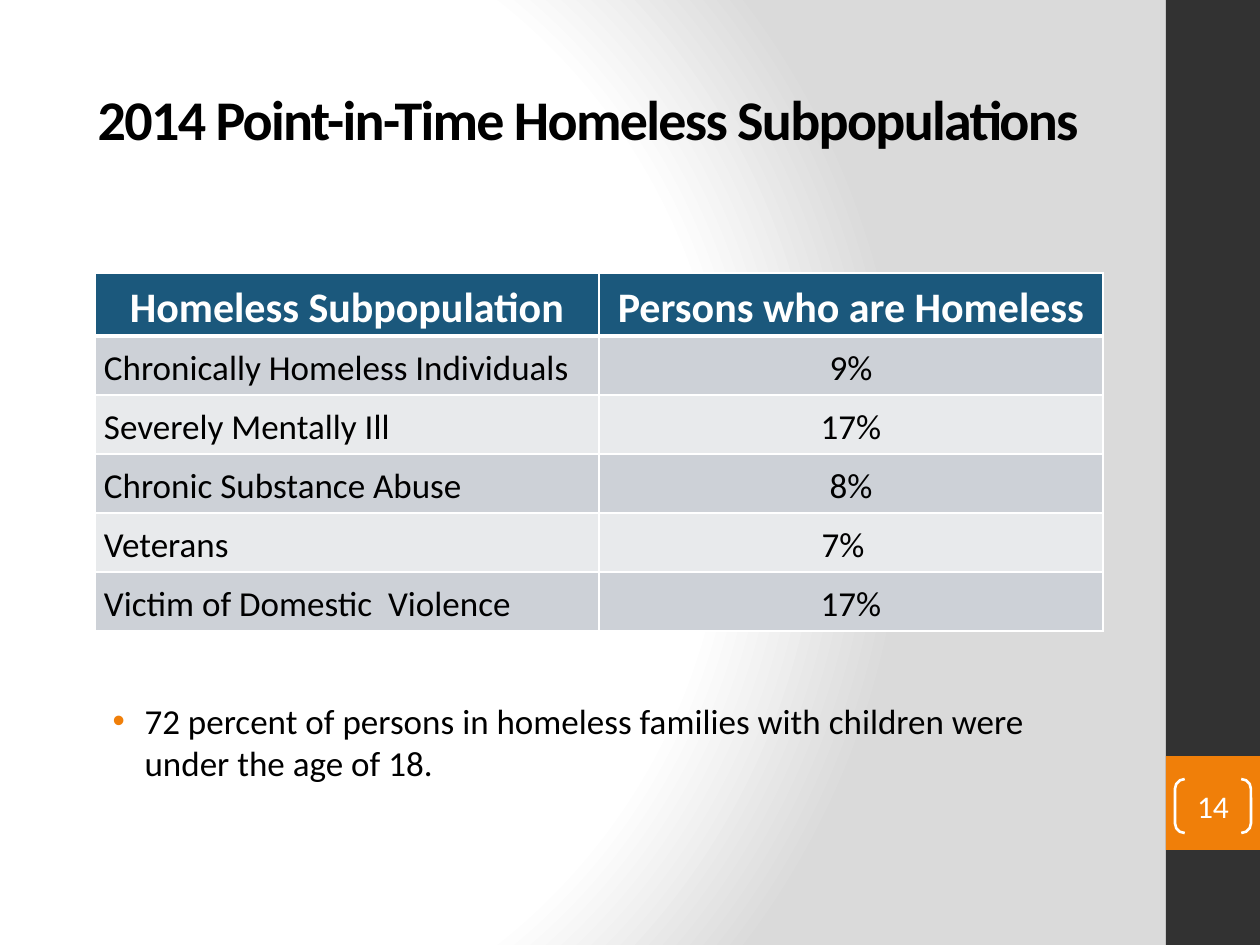
from dataclasses import dataclass

from lxml import etree
from pptx import Presentation
from pptx.dml.color import RGBColor
from pptx.enum.shapes import MSO_SHAPE
from pptx.enum.text import MSO_ANCHOR, MSO_AUTO_SIZE, PP_ALIGN
from pptx.oxml import parse_xml
from pptx.oxml.ns import qn
from pptx.util import Emu, Pt

RECTANGLE, BRACKETS = MSO_SHAPE.RECTANGLE, MSO_SHAPE.DOUBLE_BRACKET
LEFT, CENTER = PP_ALIGN.LEFT, PP_ALIGN.CENTER
TOP, MIDDLE = MSO_ANCHOR.TOP, MSO_ANCHOR.MIDDLE
NO_AUTOFIT = MSO_AUTO_SIZE.NONE
EMU_PER_PX = 914400 / 126
NAMESPACES = (
    'xmlns:a="http://schemas.openxmlformats.org/drawingml/2006/main" '
    'xmlns:p="http://schemas.openxmlformats.org/presentationml/2006/main"'
)


@dataclass(frozen=True)
class Theme:
    font: str = "Calibri"
    ink: str = "000000"
    white: str = "FFFFFF"
    shade: str = "DADADA"
    sidebar: str = "323232"
    accent: str = "F07F09"
    header: str = "1B587C"
    bands: tuple = ("CDD1D7", "E8EAEC")
    title_size: int = 32
    header_size: int = 24
    body_size: int = 20
    number_size: int = 18


THEME = Theme()

ROWS = [
    ("Homeless Subpopulation", "Persons who are Homeless"),
    ("Chronically Homeless Individuals", "9%"),
    ("Severely Mentally Ill", "17%"),
    ("Chronic Substance Abuse", "8%"),
    ("Veterans", "7%  "),
    ("Victim of Domestic  Violence", "17%"),
]


def px(length):
    return Emu(round(length * EMU_PER_PX))


def rgb(color):
    return RGBColor.from_string(color)


def write(frame, text, size, color=THEME.ink, bold=False, align=LEFT):
    frame.text = text
    para = frame.paragraphs[0]
    para.alignment = align
    span = para.runs[0]
    span.font.name = THEME.font
    span.font.size = Pt(size)
    span.font.bold = bold
    span.font.color.rgb = rgb(color)
    return para


def set_frame(frame, anchor):
    frame.word_wrap = True
    frame.auto_size = NO_AUTOFIT
    frame.vertical_anchor = anchor


def place(box, left, top, width, height):
    box.left, box.top = px(left), px(top)
    box.width, box.height = px(width), px(height)


def set_background(page):
    stops = "".join(
        f'<a:gs pos="{position}"><a:srgbClr val="{color}"/></a:gs>'
        for position, color in ((0, THEME.white), (75000, THEME.white), (100000, THEME.shade))
    )
    background = parse_xml(
        f"<p:bg {NAMESPACES}><p:bgPr><a:gradFill><a:gsLst>{stops}</a:gsLst>"
        '<a:path path="circle"><a:fillToRect l="20000" t="50000" r="100000" b="50000"/>'
        "</a:path></a:gradFill><a:effectLst/></p:bgPr></p:bg>"
    )
    page.element.cSld.insert(0, background)


def add_block(page, color, left, top, width, height):
    block = page.shapes.add_shape(RECTANGLE, px(left), px(top), px(width), px(height))
    block.shadow.inherit = False
    block.fill.solid()
    block.fill.fore_color.rgb = rgb(color)
    block.line.fill.background()


def fill_title(page, text):
    title = page.shapes.title
    place(title, 63, 38, 1050, 161)
    para = write(title.text_frame, text, THEME.title_size, bold=True, align=CENTER)
    set_frame(title.text_frame, MIDDLE)
    para.runs[0]._r.get_or_add_rPr().set("spc", "-100")


def fill_body(page, text):
    body = page.placeholders[1]
    place(body, 84, 693, 1029, 151)
    para = write(body.text_frame, text, THEME.body_size)
    set_frame(body.text_frame, TOP)
    para.space_before = Pt(4)
    settings = para._p.get_or_add_pPr()
    settings.set("marL", str(px(48)))
    settings.set("indent", str(-px(32)))
    bullet_color = etree.SubElement(settings, qn("a:buClr"))
    etree.SubElement(bullet_color, qn("a:srgbClr"), val=THEME.accent)
    etree.SubElement(settings, qn("a:buFont"), typeface="Arial")
    etree.SubElement(settings, qn("a:buChar"), char="•")


def add_borders(cell, top, bottom):
    settings = cell._tc.get_or_add_tcPr()
    for side, points in (("L", 1), ("R", 1), ("T", top), ("B", bottom)):
        line = etree.SubElement(settings, qn(f"a:ln{side}"), w=str(Pt(points)))
        fill = etree.SubElement(line, qn("a:solidFill"))
        etree.SubElement(fill, qn("a:srgbClr"), val=THEME.white)


def format_cell(cell, text, row, column):
    is_header = row == 0
    para = write(
        cell.text_frame,
        text,
        THEME.header_size if is_header else THEME.body_size,
        THEME.white if is_header else THEME.ink,
        bold=is_header,
        align=CENTER if is_header or column else LEFT,
    )
    para.line_spacing = 1.15
    cell.vertical_anchor = MIDDLE
    cell.margin_left = cell.margin_right = px(9)
    cell.margin_top = cell.margin_bottom = 0
    add_borders(cell, top=3 if row == 1 else 1, bottom=3 if is_header else 1)
    cell.fill.solid()
    cell.fill.fore_color.rgb = rgb(THEME.header if is_header else THEME.bands[(row - 1) % 2])


def add_subpopulation_table(page):
    frame = page.shapes.add_table(len(ROWS), 2, px(95), px(273), px(1008), px(358))
    table = frame.table
    for row, texts in enumerate(ROWS):
        table.rows[row].height = px(59 if row else 63)
        for column, text in enumerate(texts):
            format_cell(table.cell(row, column), text, row, column)


def add_page_number(page, number):
    badge = page.shapes.add_shape(BRACKETS, px(1175), px(779), px(76), px(54))
    badge.adjustments[0] = 0.18
    badge.shadow.inherit = False
    badge.fill.background()
    badge.line.color.rgb = rgb(THEME.white)
    badge.line.width = Pt(1.5)
    frame = badge.text_frame
    frame.margin_left = frame.margin_right = frame.margin_top = frame.margin_bottom = 0
    write(frame, number, THEME.number_size, THEME.white, align=CENTER)
    set_frame(frame, MIDDLE)


def main():
    deck = Presentation()
    deck.slide_width, deck.slide_height = px(1260), px(945)
    page = deck.slides.add_slide(deck.slide_layouts[1])
    set_background(page)
    add_block(page, THEME.sidebar, 1166, 0, 94, 945)
    add_block(page, THEME.accent, 1166, 756, 94, 94)
    fill_title(page, "2014 Point-in-Time Homeless Subpopulations")
    fill_body(
        page,
        "72 percent of persons in homeless families with children were under the age of 18.",
    )
    add_subpopulation_table(page)
    add_page_number(page, "14")
    deck.save("out.pptx")


if __name__ == "__main__":
    main()
